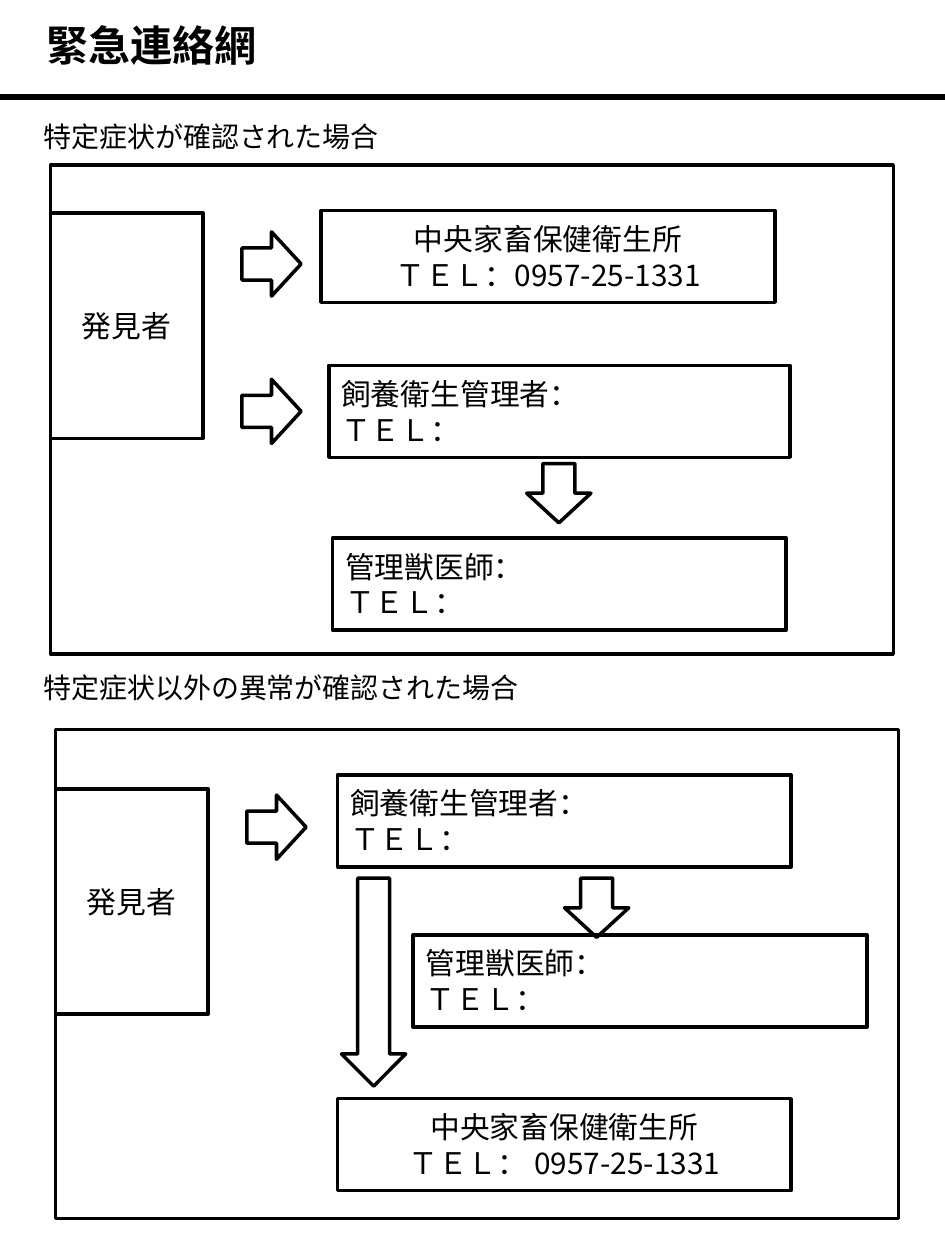
from lxml import etree
from pptx import Presentation
from pptx.dml.color import RGBColor
from pptx.enum.shapes import MSO_CONNECTOR, MSO_SHAPE
from pptx.enum.text import MSO_ANCHOR, PP_ALIGN
from pptx.oxml.ns import qn
from pptx.util import Inches, Pt

BLACK = RGBColor(0x00, 0x00, 0x00)
FONT = "Noto Sans CJK JP"
PANEL_W, PANEL_H = 6.69, 3.88
FINDER_W, FINDER_H = 1.21, 1.79
CONTACT_W, CONTACT_H = 3.6, 0.73
ARROW_L, ARROW_W = 0.47, 0.51
ARROW_X = 1.52

FINDER = ["発見者"]
MANAGER = ["飼養衛生管理者：", "ＴＥＬ："]
VET = ["管理獣医師：", "ＴＥＬ："]
CENTER = "中央家畜保健衛生所"


def write(tf, lines, size=17, bold=False, align=PP_ALIGN.LEFT,
          anchor=MSO_ANCHOR.MIDDLE):
    tf.word_wrap = True
    tf.vertical_anchor = anchor
    for i, line in enumerate(lines):
        p = tf.paragraphs[0] if i == 0 else tf.add_paragraph()
        p.alignment = align
        r = p.add_run()
        r.text = line
        r.font.name = FONT
        r.font.size = Pt(size)
        r.font.bold = bold
        r.font.color.rgb = BLACK
        ea = etree.SubElement(r.font._element, qn("a:ea"))
        ea.set("typeface", FONT)


def add_outline(s, kind, x, y, w, h):
    sp = s.shapes.add_shape(kind, Inches(x), Inches(y), Inches(w), Inches(h))
    sp.shadow.inherit = False
    sp.fill.background()
    sp.line.color.rgb = BLACK
    sp.line.width = Pt(2)
    return sp


def add_box(s, x, y, w, h, lines=(), **fmt):
    sp = add_outline(s, MSO_SHAPE.RECTANGLE, x, y, w, h)
    write(sp.text_frame, lines, **fmt)


def add_contact(s, x, y, lines, w=CONTACT_W, **fmt):
    add_box(s, x, y, w, CONTACT_H, lines, **fmt)


def add_arrow(s, x, y, length=ARROW_L, down=False):
    sp = add_outline(s, MSO_SHAPE.RIGHT_ARROW, x, y, length, ARROW_W)
    sp.rotation = 90 if down else 0


def add_label(s, x, y, w, h, text, **fmt):
    tf = s.shapes.add_textbox(Inches(x), Inches(y), Inches(w), Inches(h)).text_frame
    write(tf, [text], **fmt)
    return tf


def add_header(s, x, y, w, h):
    line_y = Inches(0.77)
    line = s.shapes.add_connector(MSO_CONNECTOR.STRAIGHT, 0, line_y,
                                  Inches(7.5), line_y)
    line.line.color.rgb = BLACK
    line.line.width = Pt(3)
    etree.SubElement(line._element.spPr, qn("a:effectLst"))
    tf = add_label(s, x, y, w, h, "緊急連絡網", size=24, bold=True)
    tf.margin_left = tf.margin_right = Inches(0.12)
    tf.margin_top = tf.margin_bottom = Inches(0.06)


def add_panel(s, x, y, finder_dy):
    """Frame with the finder's box on its left edge."""
    add_box(s, x, y, PANEL_W, PANEL_H)
    add_box(s, x, y + finder_dy, FINDER_W, FINDER_H, FINDER,
            align=PP_ALIGN.CENTER)


def add_specific_symptoms(s, x, y):
    add_panel(s, x, y, 0.38)
    for dy in (0.53, 1.7):
        add_arrow(s, x + ARROW_X, y + dy)
    add_contact(s, x + 2.21, y + 1.59, MANAGER, w=3.66)
    add_contact(s, x + 2.15, y + 0.36, [CENTER, "ＴＥＬ：0957-25-1331"],
                align=PP_ALIGN.CENTER)
    add_contact(s, x + 2.24, y + 2.96, VET)
    add_arrow(s, x + 3.8, y + 2.35, down=True)


def add_other_abnormality(s, x, y):
    add_panel(s, x, y, 0.47)
    add_arrow(s, x + ARROW_X, y + 0.52)
    add_contact(s, x + 2.24, y + 0.36, MANAGER)
    add_contact(s, x + 2.24, y + 2.93, [CENTER, "ＴＥＬ： 0957-25-1331"],
                align=PP_ALIGN.CENTER)
    add_contact(s, x + 2.84, y + 1.63, VET)
    add_arrow(s, x + 1.7, y + 1.75, length=1.65, down=True)
    add_arrow(s, x + 4.06, y + 1.16, down=True)


def main():
    prs = Presentation()
    prs.slide_width, prs.slide_height = Inches(7.5), Inches(10)
    s = prs.slides.add_slide(prs.slide_layouts[6])
    add_header(s, 0.25, 0.09, 7.26, 0.53)
    for y, text in ((0.9, "特定症状が確認された場合"),
                    (5.27, "特定症状以外の異常が確認された場合")):
        add_label(s, 0.25, y, 5.77, 0.37, text, size=16, anchor=MSO_ANCHOR.TOP)
    add_specific_symptoms(s, 0.4, 1.31)
    add_other_abnormality(s, 0.44, 5.79)
    prs.save("out.pptx")


if __name__ == "__main__":
    main()
